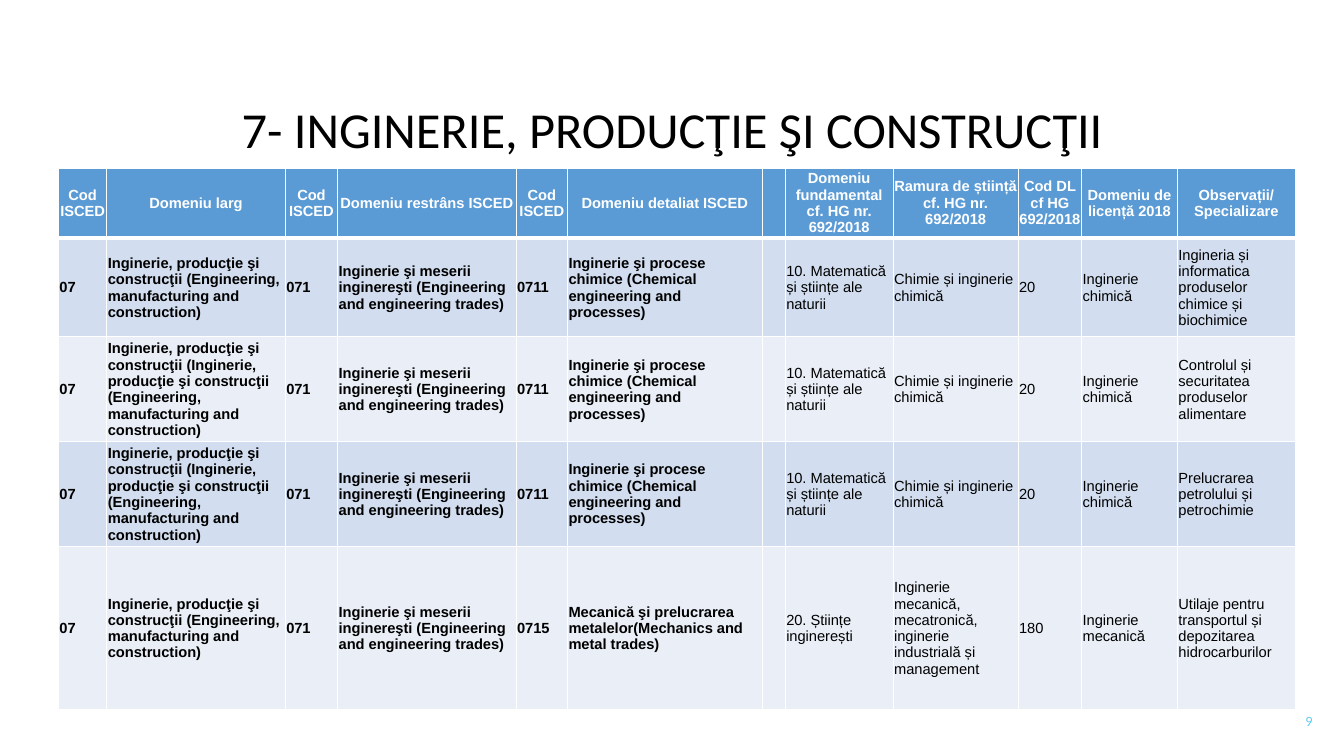
from dataclasses import dataclass
from typing import NamedTuple

from lxml.etree import SubElement
from pptx import Presentation
from pptx.dml.color import RGBColor
from pptx.enum.text import MSO_ANCHOR, PP_ALIGN
from pptx.oxml.ns import qn
from pptx.slide import Slide
from pptx.table import _Cell
from pptx.text.text import _Paragraph
from pptx.util import Pt

EMU_PER_PX = 9144  # 100 px to the inch
HEADER_FILL = "5B9BD5"
BAND_FILLS = ("D2DEEF", "EAEFF7")
WHITE, BLACK, PAGE_BLUE = "FFFFFF", "000000", "5FCBEF"
HEADER_HEIGHT = 69


class Column(NamedTuple):
    heading: str
    width: int


class TextStyle(NamedTuple):
    font: str
    size: float
    colour: str
    bold: bool = False
    align: PP_ALIGN = PP_ALIGN.LEFT


class Label(NamedTuple):
    text: str
    left: int
    top: int
    width: int
    height: int
    style: TextStyle
    line_spacing: float = 1.0


@dataclass
class Programme:
    height: int
    broad_field: str
    detailed_code: str
    detailed_field: str
    fundamental_field: str
    science_branch: str
    degree_code: str
    degree_field: str
    specialisation: str

    def cells(self) -> list[str]:
        return [
            "07", self.broad_field, "071", NARROW_FIELD,
            self.detailed_code, self.detailed_field, "",
            self.fundamental_field, self.science_branch,
            self.degree_code, self.degree_field, self.specialisation,
        ]


ENGINEERING = "Inginerie, producţie şi construcţii (Engineering, manufacturing and construction)"
ENGINEERING_NESTED = f"Inginerie, producţie şi construcţii ({ENGINEERING}"
NARROW_FIELD = "Inginerie şi meserii inginereşti (Engineering and engineering trades)"
CHEMICAL = (
    "0711", "Inginerie şi procese chimice (Chemical engineering and processes)",
    "10. Matematică și științe ale naturii", "Chimie și inginerie chimică",
    "20", "Inginerie chimică",
)
MECHANICAL = (
    "0715", "Mecanică şi prelucrarea metalelor(Mechanics and metal trades)",
    "20. Științe inginerești",
    "Inginerie mecanică, mecatronică, inginerie industrială și management",
    "180", "Inginerie mecanică",
)

COLUMNS = [
    Column("Cod ISCED", 48),
    Column("Domeniu larg", 177),
    Column("Cod ISCED", 52),
    Column("Domeniu restrâns ISCED", 177),
    Column("Cod ISCED", 51),
    Column("Domeniu detaliat ISCED", 193),
    Column("", 23),
    Column("Domeniu fundamental cf. HG nr. 692/2018", 107),
    Column("Ramura de știință cf. HG nr. 692/2018", 124),
    Column("Cod DL cf HG 692/2018", 63),
    Column("Domeniu de licență 2018", 95),
    Column("Observații/ Specializare", 117),
]
BOLD_COLUMNS = 6

PROGRAMMES = [
    Programme(98, ENGINEERING, *CHEMICAL,
              "Ingineria și informatica produselor chimice și biochimice"),
    Programme(104, ENGINEERING_NESTED, *CHEMICAL,
              "Controlul și securitatea produselor alimentare"),
    Programme(104, ENGINEERING_NESTED, *CHEMICAL,
              "Prelucrarea petrolului și petrochimie"),
    Programme(162, ENGINEERING, *MECHANICAL,
              "Utilaje pentru transportul și depozitarea hidrocarburilor"),
]

HEADER_STYLE = TextStyle("Arial", 10.5, WHITE, True, PP_ALIGN.CENTER)
BOLD_STYLE = TextStyle("Arial", 10.5, BLACK, True)
PLAIN_STYLE = TextStyle("Arial", 10.5, BLACK)

LABELS = [
    Label("7- INGINERIE, PRODUCŢIE ŞI CONSTRUCŢII", 92, 95, 1150, 72,
          TextStyle("Calibri", 36, BLACK, align=PP_ALIGN.CENTER), 0.9),
    Label("9", 1012, 696, 300, 40,
          TextStyle("Lato", 9, PAGE_BLUE, align=PP_ALIGN.RIGHT)),
]


def px(length: int) -> int:
    return length * EMU_PER_PX


def colour(value: str) -> RGBColor:
    return RGBColor.from_string(value)


def write(para: _Paragraph, text: str, style: TextStyle) -> None:
    para.alignment = style.align
    span = para.add_run() if text else para
    if text:
        span.text = text
    formats = {"name": style.font, "size": Pt(style.size), "bold": style.bold}
    for name, value in formats.items():
        setattr(span.font, name, value)
    span.font.color.rgb = colour(style.colour)


def add_label(page: Slide, label: Label) -> None:
    box = page.shapes.add_textbox(*map(px, label[1:5]))
    frame = box.text_frame
    frame.word_wrap = True
    frame.vertical_anchor = MSO_ANCHOR.MIDDLE
    para = frame.paragraphs[0]
    para.line_spacing = label.line_spacing
    write(para, label.text, label.style)


def add_borders(cell: _Cell, row: int) -> None:
    """Draw thin white borders, with a thick one under the header row."""
    widths = {"L": 1, "R": 1, "T": 3 if row == 1 else 1, "B": 3 if row == 0 else 1}
    properties = cell._tc.get_or_add_tcPr()
    for side, width in widths.items():
        line = SubElement(properties, qn(f"a:ln{side}"), w=str(Pt(width)))
        fill = SubElement(line, qn("a:solidFill"))
        SubElement(fill, qn("a:srgbClr"), val=WHITE)


def fill_cell(cell: _Cell, text: str, row: int, column: int) -> None:
    add_borders(cell, row)
    inset = px(1 if row else 0)
    formats = {
        "margin_left": inset, "margin_top": inset, "margin_right": inset,
        "margin_bottom": 0, "vertical_anchor": MSO_ANCHOR.MIDDLE,
    }
    for name, value in formats.items():
        setattr(cell, name, value)
    cell.fill.solid()
    cell.fill.fore_color.rgb = colour(BAND_FILLS[(row - 1) % 2] if row else HEADER_FILL)
    body_style = BOLD_STYLE if column < BOLD_COLUMNS else PLAIN_STYLE
    write(cell.text_frame.paragraphs[0], text, body_style if row else HEADER_STYLE)


def add_programme_table(page: Slide) -> None:
    heights = [HEADER_HEIGHT] + [programme.height for programme in PROGRAMMES]
    rows = [[column.heading for column in COLUMNS]]
    rows += [programme.cells() for programme in PROGRAMMES]
    width = sum(column.width for column in COLUMNS)
    table = page.shapes.add_table(
        len(rows), len(COLUMNS), px(58), px(167), px(width), px(sum(heights))
    ).table
    for index, column in enumerate(COLUMNS):
        table.columns[index].width = px(column.width)
    for row, (height, texts) in enumerate(zip(heights, rows)):
        table.rows[row].height = px(height)
        for column, text in enumerate(texts):
            fill_cell(table.cell(row, column), text, row, column)


def main() -> None:
    deck = Presentation()
    deck.slide_width, deck.slide_height = px(1333), px(750)
    page = deck.slides.add_slide(deck.slide_layouts[6])
    add_programme_table(page)
    for label in LABELS:
        add_label(page, label)
    deck.save("out.pptx")


if __name__ == "__main__":
    main()
